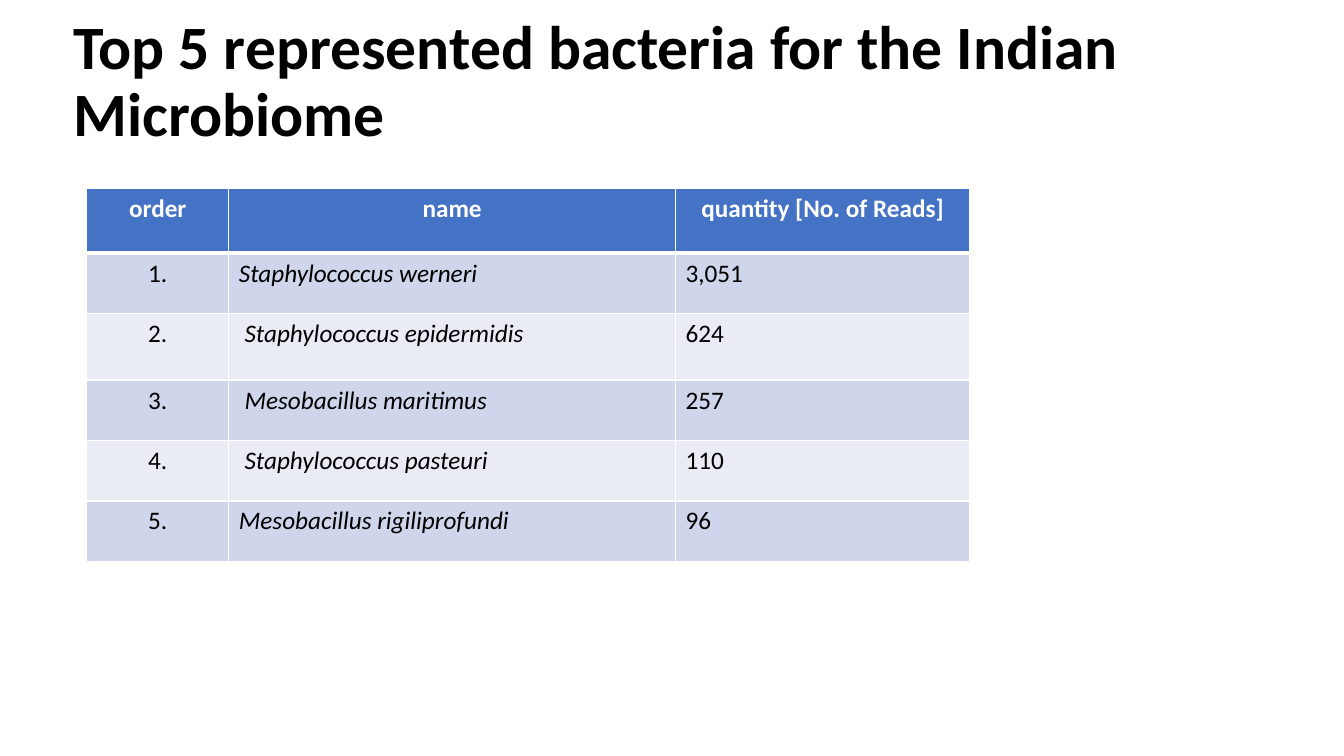
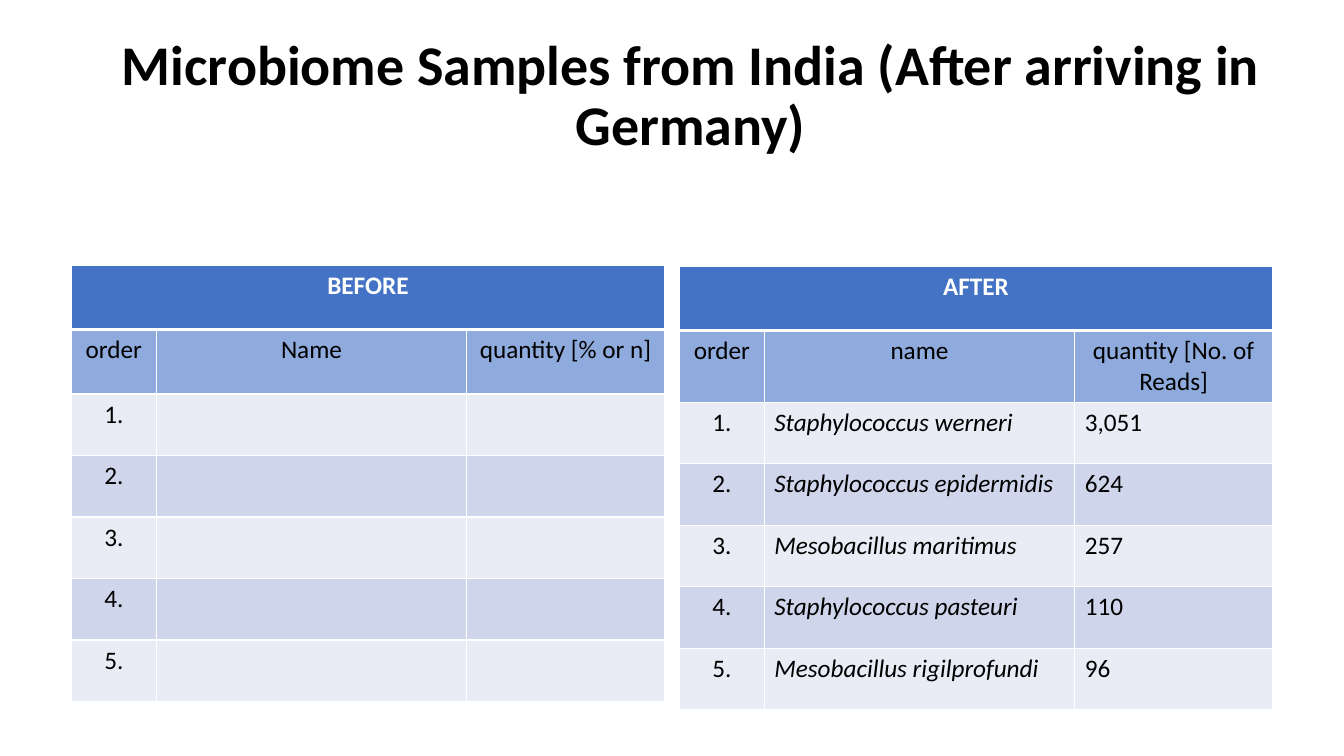
"""Build two slides of microbiome read counts."""
import pptx
import pptx.dml.color
import pptx.enum.text
import pptx.oxml
import pptx.oxml.ns
import pptx.util

RGB = pptx.dml.color.RGBColor
ALIGN = pptx.enum.text.PP_ALIGN
WHITE = RGB(0xFF, 0xFF, 0xFF)
BLACK = RGB(0x00, 0x00, 0x00)
BLUE = RGB(0x44, 0x72, 0xC4)
SKY = RGB(0x8F, 0xAA, 0xDC)
DARK = RGB(0xCF, 0xD5, 0xEA)
LIGHT = RGB(0xE9, 0xEB, 0xF5)
FONT = "Calibri"
PX = 9144
HEADS = ["order", "name", "quantity [No. of Reads]"]
READS = ["3,051", "624", "257", "110", "96"]
TOP = ["Staphylococcus werneri", " Staphylococcus epidermidis",
       " Mesobacillus maritimus", " Staphylococcus pasteuri",
       "Mesobacillus rigiliprofundi"]
AFTER = ["Staphylococcus werneri", "Staphylococcus epidermidis",
         "Mesobacillus maritimus", "Staphylococcus pasteuri",
         "Mesobacillus rigilprofundi"]
BLANK = [""] * 5
PAIR = {"cols": [84, 308, 196], "rows": [64, 64] + [61] * 5}

SLIDES = [
    {"title": "Top 5 represented bacteria for the Indian Microbiome",
     "box": (63, 10, 1225, 145), "size": 44, "align": ALIGN.LEFT,
     "tables": [
         {"at": (86, 187), "cols": [141, 443, 292],
          "rows": [64, 60, 66, 60, 60, 60],
          "heads": HEADS, "names": TOP, "reads": READS}]},
    {"title": "Microbiome Samples from India (After arriving in Germany)",
     "box": (17, 24, 1336, 145), "size": 40, "align": ALIGN.CENTER,
     "tables": [
         {"at": (71, 263), **PAIR, "band": "BEFORE",
          "heads": ["order", "Name", "quantity [% or n]"],
          "names": BLANK, "reads": BLANK},
         {"at": (674, 264), **PAIR, "band": "AFTER",
          "heads": HEADS, "names": AFTER, "reads": READS}]},
]


def write(par, text, size, color, bold=False, italic=False):
    run = par.add_run()
    run.text = text
    font = run.font
    font.name, font.size = FONT, pptx.util.Pt(size)
    font.bold, font.italic = bold, italic
    font.color.rgb = color


def edge(cell, **widths):
    props = cell._tc.get_or_add_tcPr()
    for spot, side in enumerate("LRTB"):
        width = pptx.util.Pt(widths.get(side, 1))
        line = pptx.oxml.parse_xml(
            f'<a:ln{side} {pptx.oxml.ns.nsdecls("a")} w="{width}"><a:solidFill>'
            f'<a:srgbClr val="{WHITE}"/></a:solidFill></a:ln{side}>')
        props.insert(spot, line)


def add_title(slide, data):
    title = slide.shapes.title
    title.left, title.top, title.width, title.height = (
        n * PX for n in data["box"])
    frame = title.text_frame
    frame.word_wrap = True
    frame.auto_size = pptx.enum.text.MSO_AUTO_SIZE.NONE
    frame.vertical_anchor = pptx.enum.text.MSO_ANCHOR.MIDDLE
    par = frame.paragraphs[0]
    par.alignment, par.line_spacing = data["align"], 0.9
    write(par, data["title"], data["size"], BLACK, bold=True)


def add_table(slide, data):
    band = data.get("band")
    lines = [[band, "", ""]] if band else []
    lines.append(data["heads"])
    start = len(lines)
    for rank, pair in enumerate(zip(data["names"], data["reads"]), 1):
        lines.append([f"{rank}.", *pair])
    cols, rows = data["cols"], data["rows"]
    left, top = data["at"]
    grid = slide.shapes.add_table(
        len(rows), len(cols), left * PX, top * PX,
        sum(cols) * PX, sum(rows) * PX).table
    for col, width in zip(grid.columns, cols):
        col.width = width * PX
    for row, height in zip(grid.rows, rows):
        row.height = height * PX
    if band:
        grid.cell(0, 0).merge(grid.cell(0, len(cols) - 1))
    for r, line in enumerate(lines):
        fill = BLUE if r == 0 else SKY if r < start else (
            DARK if r % 2 else LIGHT)
        for c, text in enumerate(line):
            cell = grid.cell(r, c)
            cell.fill.solid()
            cell.fill.fore_color.rgb = fill
            edge(cell, T=3 if r == 1 else 1, B=3 if r == 0 else 1)
            if not text:
                continue
            par = cell.text_frame.paragraphs[0]
            par.alignment = (
                ALIGN.CENTER if r < start or c == 0 else ALIGN.LEFT)
            write(par, text, 18, WHITE if r == 0 else BLACK,
                  bold=r == 0, italic=r >= start and c == 1)


def main():
    deck = pptx.Presentation()
    deck.slide_width, deck.slide_height = 1333 * PX, 750 * PX
    for data in SLIDES:
        slide = deck.slides.add_slide(deck.slide_layouts[5])
        add_title(slide, data)
        for table in data["tables"]:
            add_table(slide, table)
    deck.save("out.pptx")


if __name__ == "__main__":
    main()
